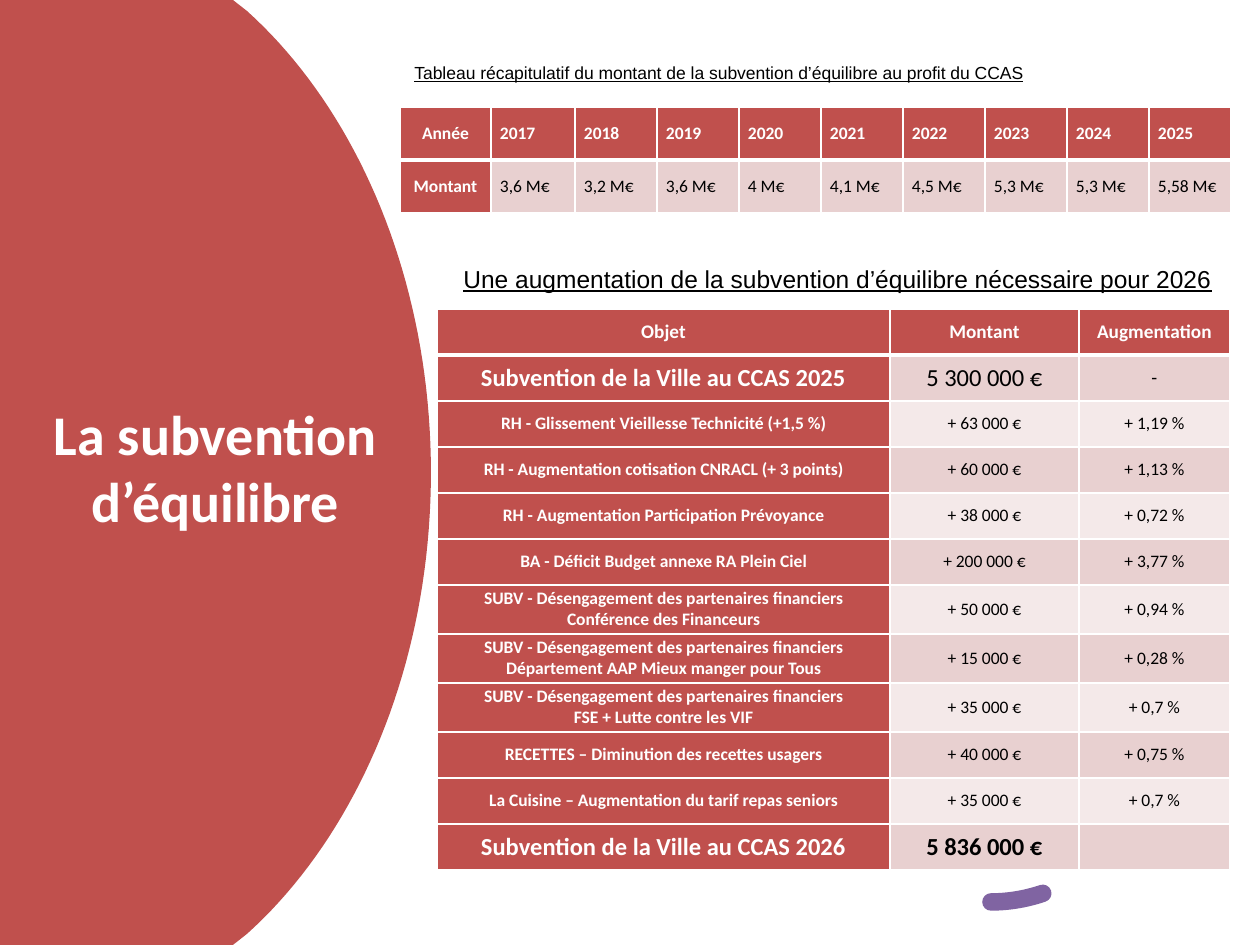
"""Build the slide on the balancing subsidy and its two tables."""
from dataclasses import dataclass
from typing import Sequence

from lxml import etree
from pptx import Presentation
from pptx import util as u
from pptx.dml.color import RGBColor
from pptx.enum import dml, shapes, text
from pptx.oxml.ns import qn

SCALE = u.Inches(1) / 126
WIDE, HIGH = 1260, 945
RED = RGBColor(0xC0, 0x50, 0x4D)
ROSE = RGBColor(0xE8, 0xD0, 0xD0)
PALE = RGBColor(0xF4, 0xE9, 0xE9)
PLUM = RGBColor(0x80, 0x64, 0xA2)
WHITE = RGBColor(0xFF, 0xFF, 0xFF)
BLACK = RGBColor(0, 0, 0)
MID = text.MSO_ANCHOR.MIDDLE
LEFT, CENTER = text.PP_ALIGN.LEFT, text.PP_ALIGN.CENTER


@dataclass(frozen=True)
class Row:
    cells: tuple[str, ...]
    high: int = 46
    size: int = 10
    total: bool = False


@dataclass(frozen=True)
class Grid:
    left: int
    top: int
    cols: tuple[int, ...]
    rows: tuple[Row, ...]
    pad: int
    align: text.PP_ALIGN


@dataclass(frozen=True)
class Head:
    words: str
    box: tuple[int, int, int, int]
    size: int
    wrap: bool


PARTNER = "SUBV - Désengagement des partenaires financiers\n"
YEARS = Grid(400, 107, (91, 84) + (82,) * 8, (
    Row(("Année", *map(str, range(2017, 2026))), 53),
    Row(("Montant", "3,6 M€", "3,2 M€", "3,6 M€", "4 M€", "4,1 M€", "4,5 M€",
         "5,3 M€", "5,3 M€", "5,58 M€"), 53),
), 9, LEFT)
NEEDS = Grid(437, 309, (453, 189, 151), (
    Row(("Objet", "Montant", "Augmentation"), size=11),
    Row(("Subvention de la Ville au CCAS 2025", "5 300 000 €", "-"), size=14),
    Row(("RH - Glissement Vieillesse Technicité (+1,5 %)", "+ 63 000 €", "+ 1,19 %")),
    Row(("RH - Augmentation cotisation CNRACL (+ 3 points)", "+ 60 000 €", "+ 1,13 %")),
    Row(("RH - Augmentation Participation Prévoyance", "+ 38 000 €", "+ 0,72 %")),
    Row(("BA - Déficit Budget annexe RA Plein Ciel", "+ 200 000 €", "+ 3,77 %")),
    Row((PARTNER + "Conférence des Financeurs", "+ 50 000 €", "+ 0,94 %"), 49),
    Row((PARTNER + "Département AAP Mieux manger pour Tous", "+ 15 000 €", "+ 0,28 %"), 49),
    Row((PARTNER + "FSE + Lutte contre les VIF", "+ 35 000 €", "+ 0,7 %"), 49),
    Row(("RECETTES – Diminution des recettes usagers", "+ 40 000 €", "+ 0,75 %")),
    Row(("La Cuisine – Augmentation du tarif repas seniors", "+ 35 000 €", "+ 0,7 %")),
    Row(("Subvention de la Ville au CCAS 2026", "5 836 000 €", ""), size=14, total=True),
), 6, CENTER)
HEADS = (
    Head("Tableau récapitulatif du montant de la subvention d’équilibre au profit du CCAS",
         (402, 55, 640, 36), 10, False),
    Head("Une augmentation de la subvention d’équilibre nécessaire pour 2026",
         (451, 257, 809, 43), 14, True),
)


def px(*nums: float) -> list[int]:
    return [round(n * SCALE) for n in nums]


def write(para, words: str, size: int, color: RGBColor, face: str = "Calibri",
          bold: bool = False, under: bool = False) -> None:
    run = para.add_run()
    run.text = words
    font = run.font
    font.name, font.size, font.bold, font.underline = face, u.Pt(size), bold, under
    font.color.rgb = color


def edge(cell, side: str, width: int) -> None:
    line = etree.SubElement(cell._tc.get_or_add_tcPr(), qn(f"a:ln{side}"),
                            w=str(u.Pt(width)))
    fill = etree.SubElement(line, qn("a:solidFill"))
    etree.SubElement(fill, qn("a:srgbClr"), val=str(WHITE))


def draw_panel(slide) -> None:
    ends = ((247, 11), (358, 111), (431, 281), (431, 472.5))
    steps = 40
    arc = []
    for i in range(steps + 1):
        t = i / steps
        parts = ((1 - t) ** 3, 3 * t * (1 - t) ** 2, 3 * t * t * (1 - t), t ** 3)
        arc.append(tuple(sum(w * p[k] for w, p in zip(parts, ends)) for k in (0, 1)))
    half = [(233, 0)] + arc
    rim = half + [(x, HIGH - y) for x, y in reversed(half[:-1])]
    form = slide.shapes.build_freeform(0, 0, scale=1.0)
    form.add_line_segments([px(*p) for p in rim + [(0, HIGH)]], close=True)
    panel = form.convert_to_shape()
    panel.shadow.inherit = False
    panel.fill.solid()
    panel.fill.fore_color.rgb = RED
    panel.line.fill.background()


def draw_title(slide) -> None:
    title = slide.shapes.title
    slide.shapes._spTree.append(title._element)
    title.left, title.top, title.width, title.height = px(0, 159, 431, 615)
    frame = title.text_frame
    frame.word_wrap, frame.vertical_anchor = True, MID
    frame.paragraphs[0].alignment = CENTER
    write(frame.paragraphs[0], "La subvention d’équilibre", 32, WHITE, bold=True)


def draw_arc(slide) -> None:
    arc = slide.shapes.add_shape(shapes.MSO_SHAPE.ARC, *px(780, 339, 422, 563))
    arc.shadow.inherit = False
    arc.fill.background()
    arc.line.color.rgb = PLUM
    arc.line.width = u.Pt(10)
    arc.line.dash_style = dml.MSO_LINE.DASH
    arc.line._ln.set("cap", "rnd")
    arc._element.spPr.find(qn("a:xfrm")).set("flipV", "1")


def draw_head(slide, head: Head) -> None:
    frame = slide.shapes.add_textbox(*px(*head.box)).text_frame
    frame.word_wrap, frame.vertical_anchor = head.wrap, MID
    write(frame.paragraphs[0], head.words, head.size, BLACK, "Arial", under=True)


def draw_cell(cell, grid: Grid, r: int, c: int) -> None:
    row = grid.rows[r]
    lead = r == 0 or c == 0
    for side in "LRTB":
        thick = (r, side) in ((0, "B"), (1, "T"))
        edge(cell, side, 3 if thick else 1)
    cell.fill.solid()
    cell.fill.fore_color.rgb = RED if lead else ROSE if r % 2 else PALE
    cell.vertical_anchor = MID
    cell.margin_left = cell.margin_right = px(grid.pad)[0]
    cell.margin_top = cell.margin_bottom = 0
    if not row.cells[c]:
        return
    frame = cell.text_frame
    size = min(row.size, 11) if c == 2 else row.size
    for i, words in enumerate(row.cells[c].split("\n")):
        para = frame.add_paragraph() if i else frame.paragraphs[0]
        para.alignment = CENTER if c == 0 else grid.align
        write(para, words, size, WHITE if lead else BLACK, bold=lead or row.total)


def draw_grid(slide, grid: Grid) -> None:
    box = px(grid.left, grid.top, sum(grid.cols), sum(r.high for r in grid.rows))
    table = slide.shapes.add_table(len(grid.rows), len(grid.cols), *box).table
    for col, wide in zip(table.columns, grid.cols):
        col.width = px(wide)[0]
    for r, row in enumerate(grid.rows):
        table.rows[r].height = px(row.high)[0]
        for c in range(len(grid.cols)):
            draw_cell(table.cell(r, c), grid, r, c)


def draw_all(slide, heads: Sequence[Head], grids: Sequence[Grid]) -> None:
    draw_panel(slide)
    draw_title(slide)
    draw_arc(slide)
    for head in heads:
        draw_head(slide, head)
    for grid in grids:
        draw_grid(slide, grid)


def main() -> None:
    deck = Presentation()
    deck.slide_width, deck.slide_height = px(WIDE, HIGH)
    draw_all(deck.slides.add_slide(deck.slide_layouts[5]), HEADS, (YEARS, NEEDS))
    deck.save("out.pptx")


if __name__ == "__main__":
    main()
